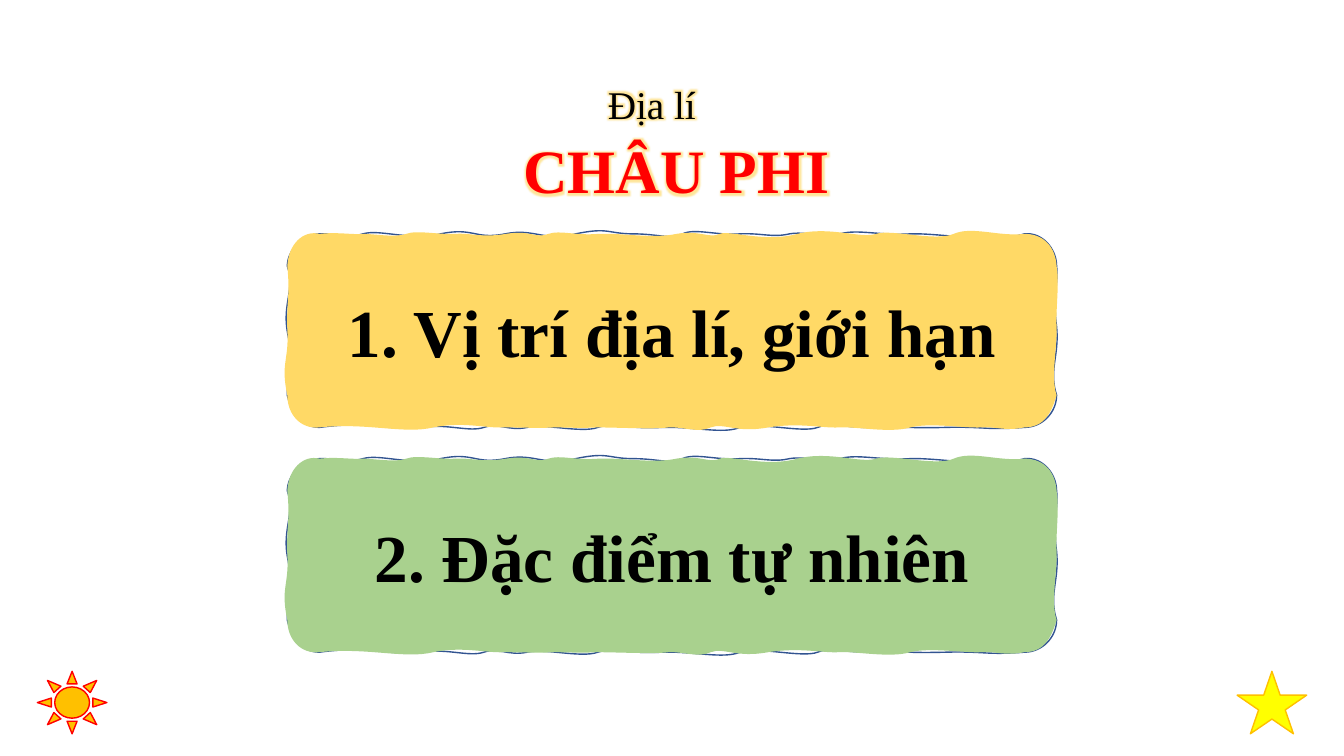
from dataclasses import dataclass

from lxml import etree
from pptx import Presentation
from pptx.dml.color import RGBColor
from pptx.enum.shapes import MSO_SHAPE
from pptx.enum.text import MSO_ANCHOR, MSO_AUTO_SIZE, PP_ALIGN
from pptx.oxml.ns import qn
from pptx.util import Emu, Inches, Pt

CENTER = PP_ALIGN.CENTER
TOP, MIDDLE = MSO_ANCHOR.TOP, MSO_ANCHOR.MIDDLE
NO_AUTOFIT = MSO_AUTO_SIZE.NONE
SUN, STAR = MSO_SHAPE.SUN, MSO_SHAPE.STAR_5_POINT
SLIDE_W, SLIDE_H = 13.33, 7.5
TITLE_ONLY = 5
UNIT = 9144
CARD_UNITS = (763, 192)


@dataclass(frozen=True)
class Theme:
    """Colours, type sizes and font of the lesson slide."""
    font: str = "Times New Roman"
    ink: str = "000000"
    red: str = "FF0000"
    gold: str = "FFC000"
    yellow: str = "FFFF00"
    sand: str = "FFD966"
    green: str = "A9D18E"
    blue: str = "325491"
    subject_size: int = 28
    topic_size: int = 44
    card_size: int = 48


THEME = Theme()

SKETCHED_EDGE = """0,32
0,15 17,0 32,0 45,-1 58,5 75,0 92,-5 120,7 152,0 185,-7 186,6 216,0
245,-6 254,8 286,0 319,-7 318,0 343,0 368,0 381,6 392,0 404,-6 427,2 449,0
471,-1 481,4 498,0 516,-3 530,5 548,0 566,-5 588,2 618,0 649,-1 698,10 731,0
749,-2 763,15 763,32 765,47 759,64 763,92 766,120 755,135 763,160
763,177 749,192 731,192 693,195 692,191 653,192 615,193 614,191 583,192
552,193 542,186 526,192 511,198 466,186 449,192 432,199 404,191 371,192
339,194 324,187 308,192 292,198 256,188 238,192 219,196 210,187 195,192
180,197 160,188 132,192 104,196 82,185 32,192 15,192 4,178 0,160
-1,129 6,126 0,97 -5,69 8,54 0,32"""

SKETCHED_FILL = """0,32
1,10 16,-4 32,0 50,-2 64,1 75,0 86,0 108,4 118,0 128,-4 151,1 167,0
183,-1 192,4 217,0 241,-4 247,5 259,0 271,-4 285,2 309,0 332,-1 363,5 386,0
409,-4 419,5 429,0 438,-4 474,9 506,0 538,-8 568,5 584,0 599,-5 643,8 661,0
679,-8 706,3 731,0 752,0 762,15 763,32 766,48 762,76 763,92
764,109 757,143 763,160 758,177 751,192 731,192 712,196 703,191 688,192
673,193 637,187 618,192 598,198 564,191 547,192 531,193 509,187 477,192
445,198 433,187 420,192 408,198 391,191 378,192 365,194 326,192 307,192
289,193 280,192 265,192 250,193 233,192 215,192 197,193 174,186 145,192
116,199 79,187 32,192 13,194 0,179 0,160 -7,128 2,125 0,95 -1,65 3,62 0,32"""


def write(paragraph, text, *, size, color, bold=False, spacing=None, indent=0, glow=None):
    """Write one centred run in the paragraph with the given format."""
    paragraph.alignment = CENTER
    if spacing:
        paragraph.line_spacing = spacing
    if indent:
        paragraph._p.get_or_add_pPr().set("marL", str(Inches(indent)))
    run = paragraph.add_run()
    run.text = text
    run.font.name = THEME.font
    run.font.size = Pt(size)
    run.font.bold = bold
    run.font.color.rgb = RGBColor.from_string(color)
    if glow:
        effects = etree.Element(qn("a:effectLst"))
        halo = etree.SubElement(effects, qn("a:glow"), rad=str(Pt(5)))
        tint = etree.SubElement(halo, qn("a:srgbClr"), val=glow)
        etree.SubElement(tint, qn("a:alpha"), val="40000")
        run._r.rPr.find(qn("a:solidFill")).addnext(effects)


def paint(shape, fill, line):
    """Give the shape a flat fill and a thin line."""
    shape.shadow.inherit = False
    shape.fill.solid()
    shape.fill.fore_color.rgb = RGBColor.from_string(fill)
    shape.line.color.rgb = RGBColor.from_string(line)
    shape.line.width = Pt(1)


def add_curve(path_list, outline, **options):
    """Add a closed chain of Bézier curves to the path list."""
    width, height = CARD_UNITS
    curve = etree.SubElement(path_list, qn("a:path"), w=str(width), h=str(height), **options)
    points = [pair.split(",") for pair in outline.split()]
    start = etree.SubElement(curve, qn("a:moveTo"))
    etree.SubElement(start, qn("a:pt"), x=points[0][0], y=points[0][1])
    for first in range(1, len(points), 3):
        bend = etree.SubElement(curve, qn("a:cubicBezTo"))
        for x, y in points[first:first + 3]:
            etree.SubElement(bend, qn("a:pt"), x=x, y=y)
    etree.SubElement(curve, qn("a:close"))


def add_heading(slide, left, top, width, height):
    """Place the subject and the topic in the title placeholder."""
    title = slide.shapes.title
    title.left, title.top, title.width, title.height = map(Inches, (left, top, width, height))
    frame = title.text_frame
    frame.word_wrap = True
    frame.auto_size = NO_AUTOFIT
    frame.vertical_anchor = TOP
    write(frame.paragraphs[0], "Địa lí", size=THEME.subject_size, color=THEME.ink,
          spacing=1.07, glow=THEME.gold)
    write(frame.add_paragraph(), "CHÂU PHI", size=THEME.topic_size, color=THEME.red,
          bold=True, spacing=1.07, indent=0.49, glow=THEME.gold)


def add_card(slide, left, top, text, fill):
    """Draw one hand-sketched card with its section name."""
    width, height = CARD_UNITS
    builder = slide.shapes.build_freeform(0, 0, scale=UNIT)
    builder.add_line_segments([(width, 0), (width, height), (0, height)])
    card = builder.convert_to_shape(Inches(left), Inches(top))
    path_list = card._element.spPr.find(qn("a:custGeom")).find(qn("a:pathLst"))
    path_list.remove(path_list[0])
    add_curve(path_list, SKETCHED_EDGE, fill="none")
    add_curve(path_list, SKETCHED_FILL, stroke="0")
    paint(card, fill, THEME.blue)
    card.text_frame.word_wrap = True
    card.text_frame.vertical_anchor = MIDDLE
    write(card.text_frame.paragraphs[0], text, size=THEME.card_size, color=THEME.ink, bold=True)


def add_cards(slide, left, top, pitch):
    """Stack the section cards at an equal pitch."""
    sections = [("1. Vị trí địa lí, giới hạn", THEME.sand),
                ("2. Đặc điểm tự nhiên", THEME.green)]
    for row, (text, fill) in enumerate(sections):
        add_card(slide, left, top + row * pitch, text, fill)


def add_corner_icons(slide, margin, top, width, height):
    """Put the sun and the star in the lower corners."""
    icons = [(SUN, margin, THEME.gold, THEME.red),
             (STAR, SLIDE_W - margin - width, THEME.yellow, THEME.gold)]
    for kind, left, fill, line in icons:
        icon = slide.shapes.add_shape(kind, *map(Inches, (left, top, width, height)))
        paint(icon, fill, line)


def main():
    """Build the lesson slide and save it."""
    deck = Presentation()
    deck.slide_width, deck.slide_height = Emu(Inches(SLIDE_W)), Emu(Inches(SLIDE_H))
    slide = deck.slides.add_slide(deck.slide_layouts[TITLE_ONLY])
    add_heading(slide, 1.56, 0.71, 9.81, 2.52)
    add_cards(slide, 2.85, 2.32, 2.23)
    add_corner_icons(slide, 0.37, 6.66, 0.69, 0.62)
    deck.save("out.pptx")


if __name__ == "__main__":
    main()
